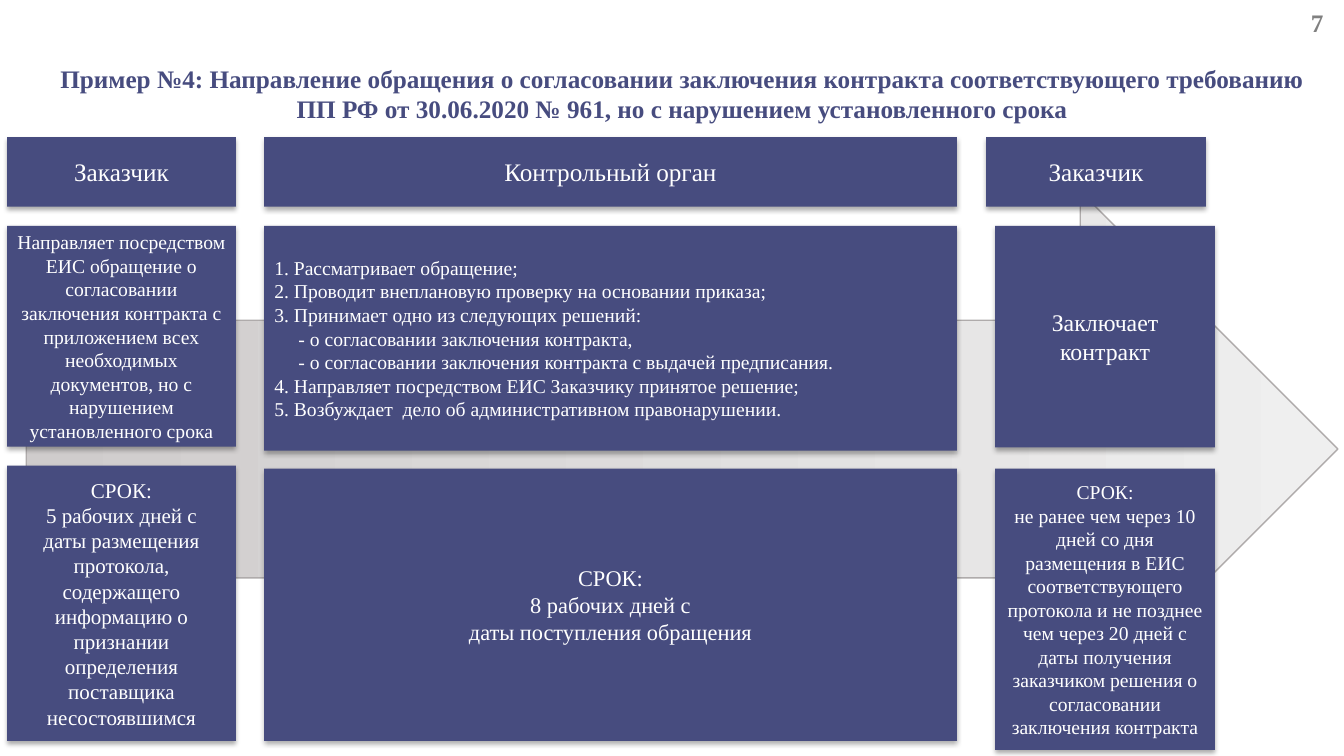
"""Build the slide on a contract request sent after its deadline."""
from lxml.etree import SubElement
from pptx import Presentation
from pptx.dml.color import RGBColor
from pptx.enum.shapes import MSO_SHAPE
from pptx.enum.text import MSO_ANCHOR, MSO_AUTO_SIZE, PP_ALIGN
from pptx.oxml.ns import qn
from pptx.util import Emu, Pt

SCALE = 9144
FONT = "Times New Roman"
NAVY, WHITE, GREY = "474C7F", "FFFFFF", "808080"
HEAD_TOP, HEAD_HIGH, ROW_TOP = 136, 69, 224

TITLE = (
    "Пример №4: Направление обращения о согласовании заключения контракта соответствующего требованию\n"
    "ПП РФ от 30.06.2020 № 961, но с нарушением установленного срока"
)
SEND = (
    "Направляет посредством ЕИС обращение о согласовании заключения контракта "
    "с приложением всех необходимых документов, но с нарушением установленного срока"
)
SEND_TERM = (
    "СРОК:\n5 рабочих дней с\nдаты размещения протокола, содержащего информацию "
    "о признании определения поставщика несостоявшимся"
)
CHECK = (
    "1. Рассматривает обращение;\n"
    "2. Проводит внеплановую проверку на основании приказа;\n"
    "3. Принимает одно из следующих решений:\n"
    "- о согласовании заключения контракта,\n"
    "- о согласовании заключения контракта с выдачей предписания.\n"
    "4. Направляет посредством ЕИС Заказчику принятое решение;\n"
    "5. Возбуждает  дело об административном правонарушении."
)
CHECK_TERM = "СРОК:\n8 рабочих дней с\nдаты поступления обращения"
SIGN_TERM = (
    "СРОК:\nне ранее чем через 10 дней со дня размещения в ЕИС соответствующего протокола "
    "и не позднее чем через 20 дней с даты получения заказчиком решения "
    "о согласовании заключения контракта"
)


def px(*nums):
    """Turn px lengths into EMU."""
    return [Emu(num * SCALE) for num in nums]


def tint(code):
    """Turn a hex string into a colour."""
    return RGBColor.from_string(code)


def place(shape, *area):
    """Move and size a shape."""
    shape.left, shape.top, shape.width, shape.height = px(*area)


def write(shape, text, size, color, bold=False, align=PP_ALIGN.CENTER):
    """Set the text of a shape and format it."""
    frame = shape.text_frame
    frame.text = text
    frame.word_wrap = True
    frame.auto_size = MSO_AUTO_SIZE.NONE
    frame.vertical_anchor = MSO_ANCHOR.MIDDLE
    for para in frame.paragraphs:
        para.alignment = align
        para.space_before = Pt(0)
        for run in para.runs:
            font = run.font
            font.name, font.size, font.bold = FONT, Pt(size), bold
            font.color.rgb = tint(color)


def paint(shape):
    """Give a shape a navy fill and a soft shadow below."""
    shape.fill.solid()
    shape.fill.fore_color.rgb = tint(NAVY)
    shape.line.fill.background()
    shape.shadow.inherit = False
    effects = shape._element.spPr.find(qn("a:effectLst"))
    shade = SubElement(effects, qn("a:outerShdw"), blurRad=str(Pt(3.5)),
                       dist=str(Pt(2.2)), dir="5400000", rotWithShape="0")
    black = SubElement(shade, qn("a:srgbClr"), val="000000")
    SubElement(black, qn("a:alpha"), val="32000")


def add_box(slide, area, text, size):
    """Add a navy box with white text."""
    box = slide.shapes.add_shape(MSO_SHAPE.RECTANGLE, *px(*area))
    paint(box)
    write(box, text, size, WHITE)


def add_arrow(slide):
    """Add the wide grey arrow behind everything else."""
    arrow = slide.shapes.add_shape(MSO_SHAPE.RIGHT_ARROW, *px(26, 190, 1301, 511))
    arrow.shadow.inherit = False
    arrow.fill.gradient()
    arrow.fill.gradient_angle = 0
    for stop, code in zip(arrow.fill.gradient_stops, ("CFCCCC", "EFEFEF")):
        stop.color.rgb = tint(code)
    arrow.line.color.rgb = tint("AFABAB")
    arrow.line.width = Pt(1)
    slide.shapes.title._element.addprevious(arrow._element)


def fill_list(body):
    """Turn the body placeholder into the list of checks."""
    place(body, 262, ROW_TOP, 687, 223)
    paint(body)
    write(body, CHECK, 14, WHITE, align=PP_ALIGN.JUSTIFY)
    for para in body.text_frame.paragraphs:
        props = para._p.get_or_add_pPr()
        inset = 24 if para.text.startswith("-") else 0
        props.set("marL", str(inset * SCALE))
        props.set("indent", "0")
        SubElement(props, qn("a:buNone"))


def main():
    """Build and save the slide."""
    deck = Presentation()
    deck.slide_width, deck.slide_height = px(1333, 750)
    slide = deck.slides.add_slide(deck.slide_layouts[1])

    title = slide.shapes.title
    place(title, 20, 66, 1313, 54)
    write(title, TITLE, 18, NAVY, bold=True)
    number = slide.shapes.add_textbox(*px(1280, -5, 53, 54))
    write(number, "7", 18, GREY, bold=True)

    add_arrow(slide)
    fill_list(slide.placeholders[1])
    for left, width, text in (
        (7, 227, "Заказчик"),
        (262, 687, "Контрольный орган"),
        (978, 218, "Заказчик"),
    ):
        add_box(slide, (left, HEAD_TOP, width, HEAD_HIGH), text, 18)
    for area, text, size in (
        ((7, ROW_TOP, 227, 219), SEND, 14),
        ((7, 462, 227, 273), SEND_TERM, 15),
        ((262, 465, 687, 270), CHECK_TERM, 16),
        ((987, ROW_TOP, 218, 220), "Заключает контракт", 17),
        ((987, 465, 218, 279), SIGN_TERM, 14),
    ):
        add_box(slide, area, text, size)
    deck.save("out.pptx")


if __name__ == "__main__":
    main()
